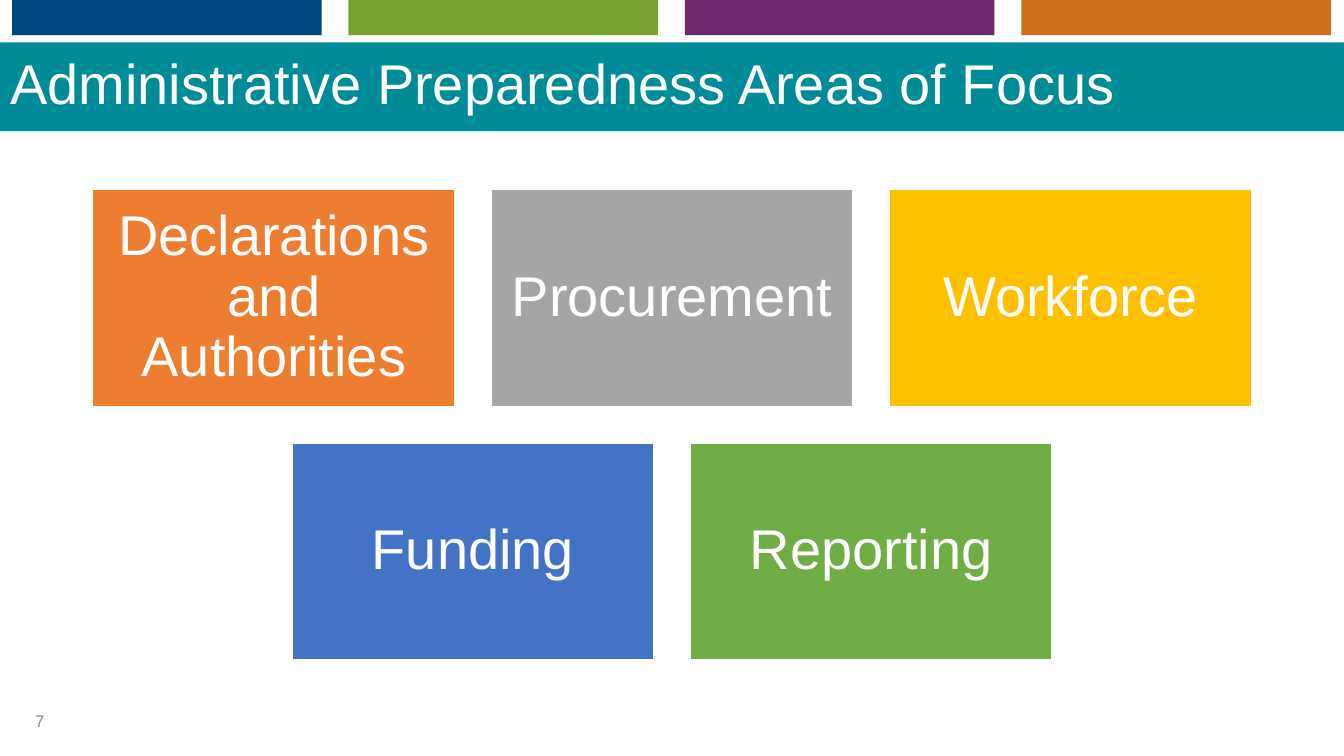
from dataclasses import dataclass

from pptx import Presentation
from pptx.dml.color import RGBColor as RGB
from pptx.enum.shapes import MSO_SHAPE as Shape
from pptx.enum.text import MSO_ANCHOR as Anchor, MSO_AUTO_SIZE as Fit, PP_ALIGN as Align
from pptx.util import Inches, Pt


@dataclass(frozen=True)
class Theme:
    font: str = "Arial"
    white: str = "FFFFFF"
    band: str = "008B99"
    muted: str = "8C8C8C"
    tabs: tuple = ("00467F", "78A22F", "6D276A", "D06F1A")
    large: int = 40
    small: int = 12


THEME = Theme()
WIDTH, HEIGHT = 13.33, 7.5
AREAS = (
    (("Declarations and Authorities", "ED7D31"), ("Procurement", "A5A5A5"), ("Workforce", "FFC000")),
    (("Funding", "4472C4"), ("Reporting", "70AD47")),
)


def add_rect(slide, box, fill, line=None):
    rect = slide.shapes.add_shape(Shape.RECTANGLE, *map(Inches, box))
    rect.shadow.inherit = False
    rect.fill.solid()
    rect.fill.fore_color.rgb = RGB.from_string(fill)
    if line:
        rect.line.color.rgb = RGB.from_string(line)
        rect.line.width = Pt(1)
    else:
        rect.line.fill.background()
    return rect


def set_text(shape, text, size, color, align=Align.LEFT, inset=(0.1, 0.05), spacing=0.9):
    frame = shape.text_frame
    frame.text = text
    para = frame.paragraphs[0]
    across, down = map(Inches, inset)
    formats = (
        (frame, dict(word_wrap=True, auto_size=Fit.NONE, vertical_anchor=Anchor.MIDDLE,
                     margin_left=across, margin_right=across,
                     margin_top=down, margin_bottom=down)),
        (para, dict(alignment=align, line_spacing=spacing, space_before=Pt(0))),
        (para.runs[0].font, dict(name=THEME.font, size=Pt(size))),
    )
    for target, values in formats:
        for name, value in values.items():
            setattr(target, name, value)
    para.runs[0].font.color.rgb = RGB.from_string(color)


# Coloured tabs along the top edge
def add_tabs(slide, box):
    left, top, width, height = box
    tab = 3.07
    step = (width - tab) / (len(THEME.tabs) - 1)
    for i, color in enumerate(THEME.tabs):
        add_rect(slide, (left + i * step, top, tab, height), color)


# Title on its full-width band
def add_title(slide, box, text):
    left, top, width, height = box
    band = add_rect(slide, box, THEME.band)
    title = slide.shapes.title
    band._element.addnext(title._element)
    pad = 0.09
    place = dict(left=left, top=top + pad, width=width, height=height - 2 * pad)
    for name, value in place.items():
        setattr(title, name, Inches(value))
    set_text(title, text, THEME.large, THEME.white)


# Focus areas: rows of equal tiles, each row centred in the box
def add_areas(slide, box, rows):
    left, top, width, height = box
    gap = 0.36
    most = max(map(len, rows))
    wide = (width - (most - 1) * gap) / most
    high = (height - (len(rows) - 1) * gap) / len(rows)
    for r, row in enumerate(rows):
        start = left + (most - len(row)) * (wide + gap) / 2
        for c, (label, color) in enumerate(row):
            spot = (start + c * (wide + gap), top + r * (high + gap), wide, high)
            tile = add_rect(slide, spot, color, THEME.white)
            set_text(tile, label, THEME.large, THEME.white, Align.CENTER, (0.17, 0.17))


# Slide number
def add_number(slide, box, number):
    note = slide.shapes.add_textbox(*map(Inches, box))
    set_text(note, str(number), THEME.small, THEME.muted, spacing=1.0)


def main():
    deck = Presentation()
    deck.slide_width, deck.slide_height = Inches(WIDTH), Inches(HEIGHT)
    slide = deck.slides.add_slide(deck.slide_layouts.get_by_name("Title Only"))
    add_tabs(slide, (0.12, 0, 13.08, 0.35))
    add_title(slide, (0, 0.42, WIDTH, 0.88), "Administrative Preparedness Areas of Focus")
    add_areas(slide, (0.92, 1.88, 11.49, 4.67), AREAS)
    add_number(slide, (0.25, 6.95, 3, 0.4), 7)
    deck.save("out.pptx")


if __name__ == "__main__":
    main()
